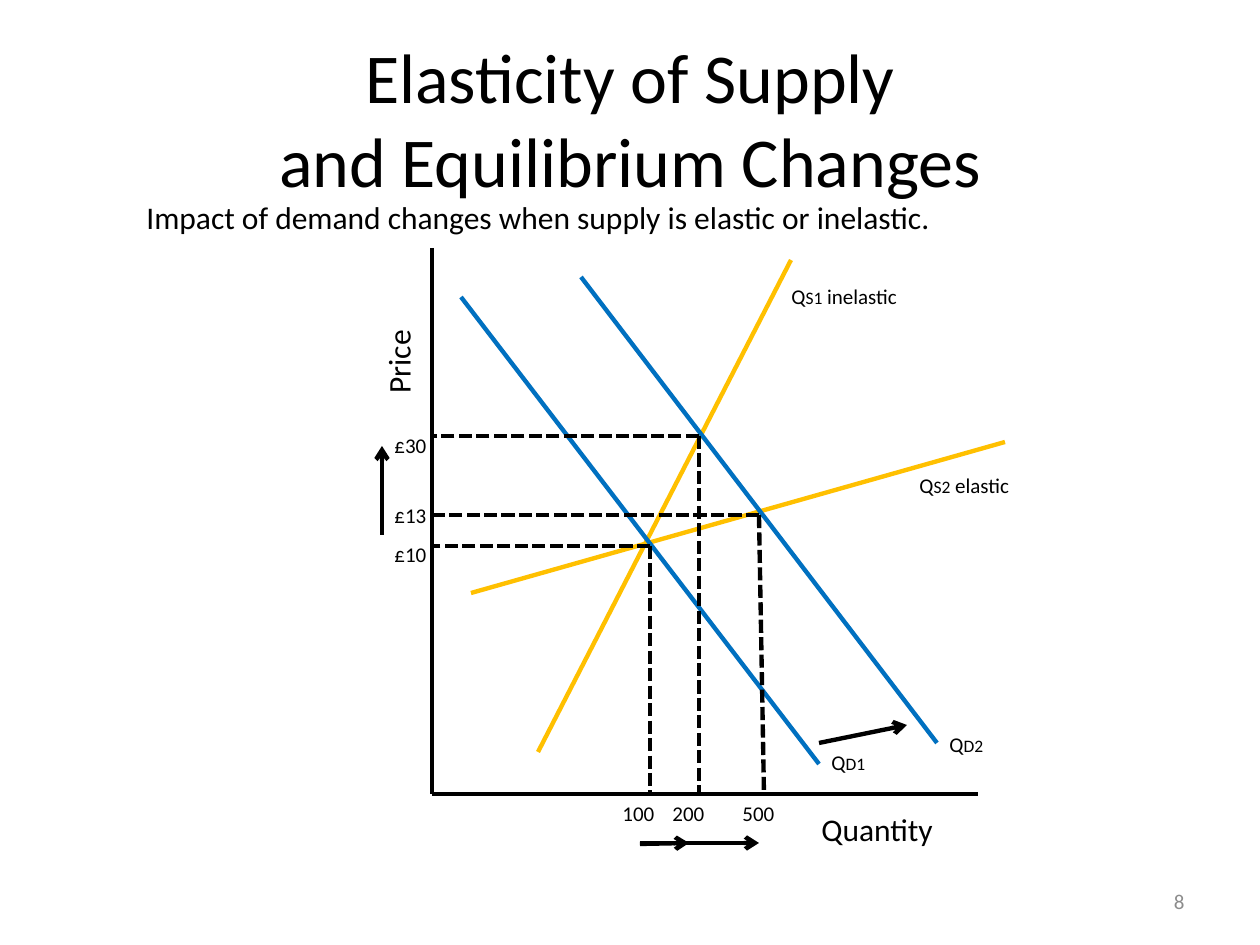
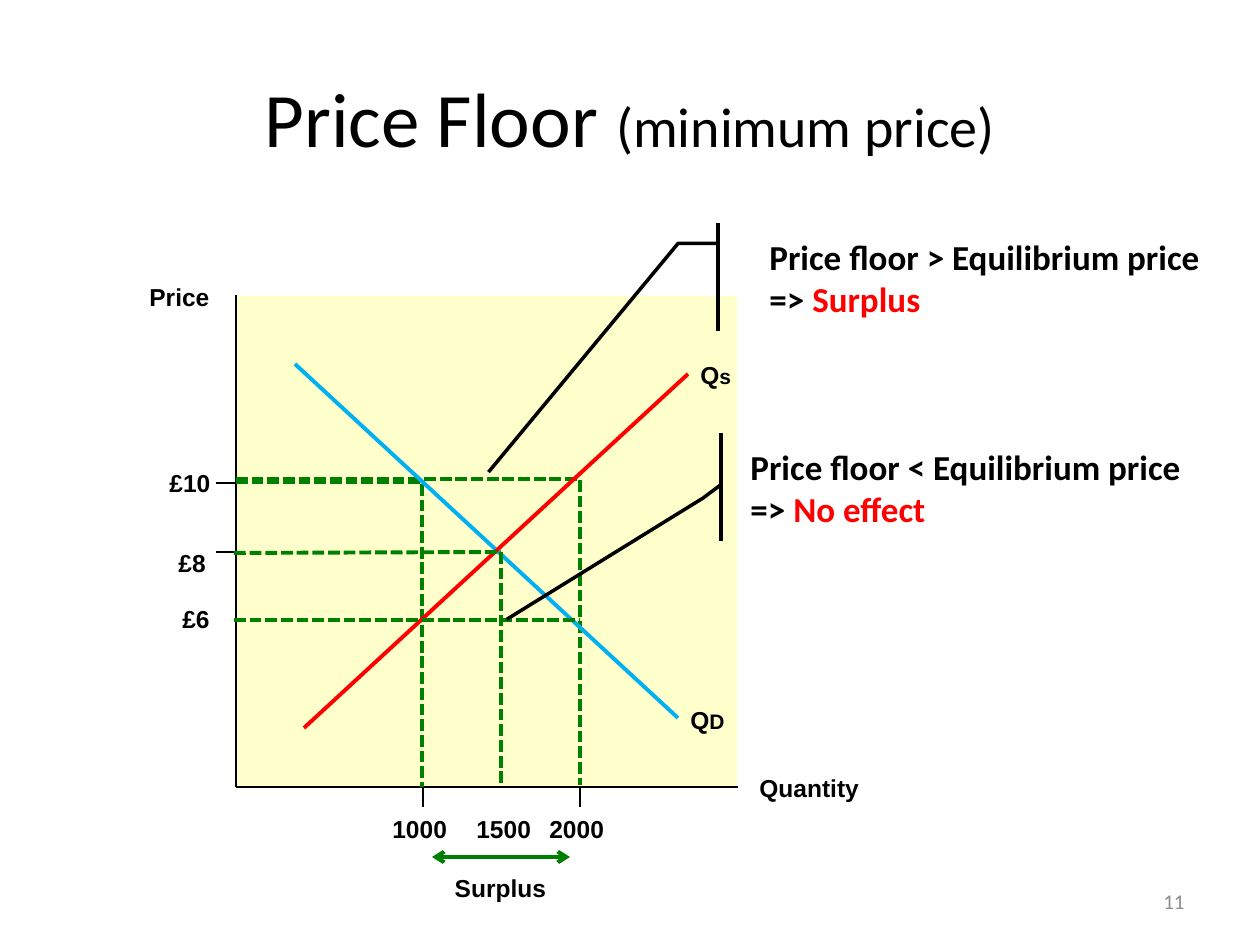
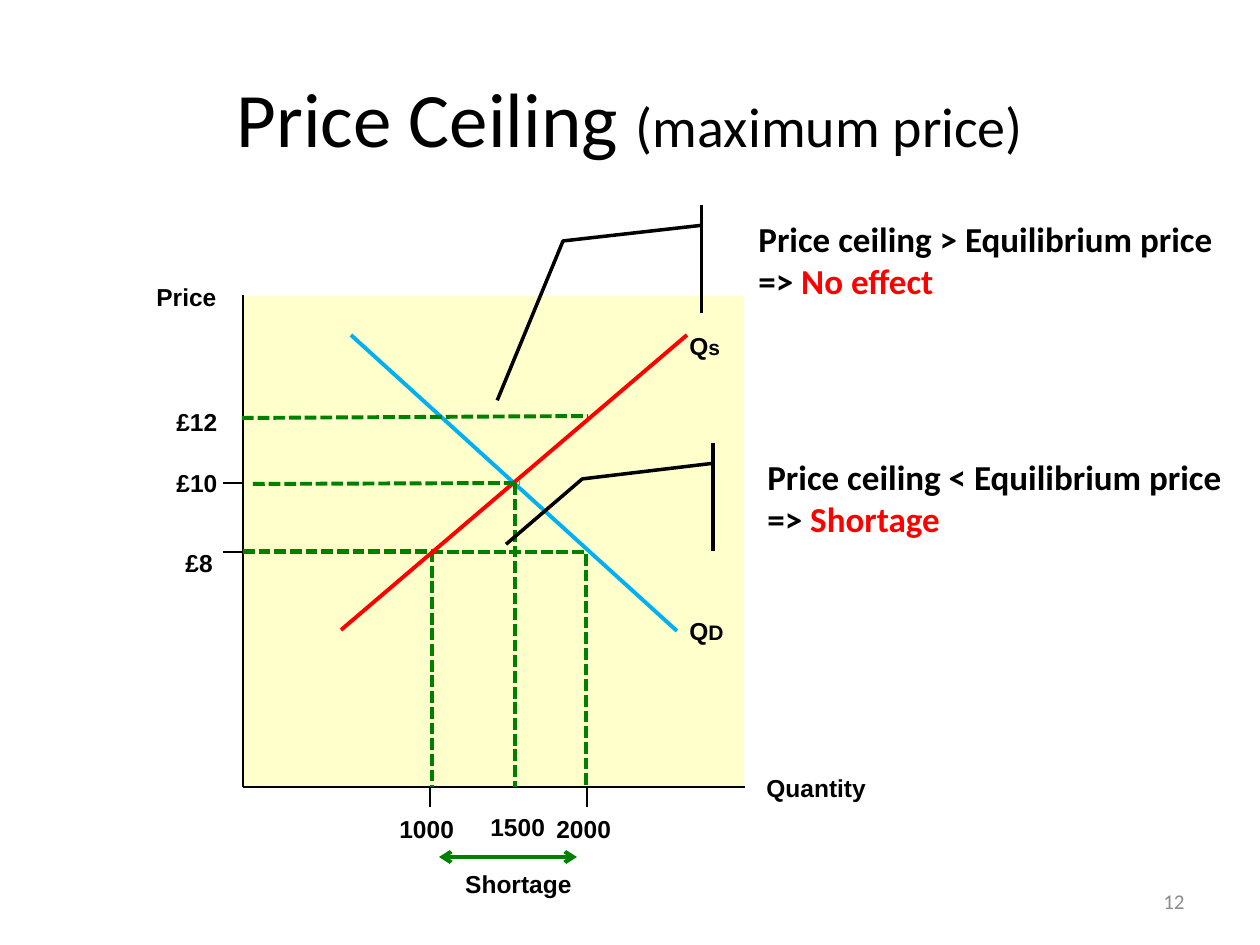
from lxml.etree import SubElement
from pptx import Presentation
from pptx.dml.color import RGBColor
from pptx.enum.dml import MSO_LINE
from pptx.enum.shapes import MSO_CONNECTOR, MSO_SHAPE
from pptx.enum.text import MSO_ANCHOR, PP_ALIGN
from pptx.oxml.ns import qn
from pptx.util import Emu, Pt

BLACK = RGBColor(0x00, 0x00, 0x00)
WHITE = RGBColor(0xFF, 0xFF, 0xFF)
GREY = RGBColor(0x8C, 0x8C, 0x8C)
CREAM = RGBColor(0xFF, 0xFF, 0xCC)
RED = RGBColor(0xFF, 0x00, 0x00)
GREEN = RGBColor(0x00, 0x80, 0x00)
SKY = RGBColor(0x00, 0xB0, 0xF0)
BLUE = RGBColor(0x00, 0x70, 0xC0)
AMBER = RGBColor(0xFF, 0xC0, 0x00)

PX = 914400 / 126
SLIDE_SIZE = (1260, 945)
TITLE_BOX = (63, 38, 1134, 158)
NUMBER_BOX = (903, 876, 294, 50)

# Slide 1: supply elasticity, all positions in px
ELASTICITY = {
    "number": "8",
    "title": [[("Elasticity of Supply", {}), ("\n", {}), ("and Equilibrium Changes", {})]],
    "lead": "Impact of demand changes when supply is elastic or inelastic.",
    "origin": (432, 794),
    "axis_ends": [(432, 248), (978, 794)],
    "curves": [
        (AMBER, (538, 752), (791, 260)),
        (AMBER, (471, 593), (1005, 442)),
        (BLUE, (461, 297), (819, 764)),
        (BLUE, (581, 277), (937, 743)),
    ],
    # equilibrium point, x of its foot on the quantity axis
    "equilibria": [((650, 546), 650), ((759, 515), 764), ((699, 436), 699)],
    "shifts": [
        ((819, 743), (907, 725)),
        ((640, 844), (689, 843)),
        ((382, 535), (382, 446)),
        ((640, 843), (759, 843)),
    ],
    # subscript, ending, left, top
    "curve_labels": [
        ("S1", " inelastic", 779, 277),
        ("S2", " elastic", 907, 466),
        ("D1", "", 819, 743),
        ("D2", "", 937, 725),
    ],
    "prices": [("£10", 535), ("£13", 496), ("£30", 426)],
    "quantities": [("100", 610), ("200", 660), ("500", 730)],
}

# Slides 2 and 3: price controls; left is the x of the price axis
CONTROLS = [
    {
        "number": "11",
        "title": ("Price Floor ", "(minimum price)"),
        "left": 236,
        "demand": ((295, 364), (678, 718)),
        "supply": ((304, 728), (688, 374)),
        "curve_labels": [("D", 678, 699), ("s", 688, 354)],
        "elbows": [((236, 479), (580, 785)), ((236, 482), (422, 787))],
        "guides": [((234, 553), (501, 552)), ((501, 552), (501, 785)), ((234, 620), (580, 620))],
        "labels": [("1500", 464, 808), ("£6", 170, 598)],
        "gap": ("Surplus", 432, 867),
        "callouts": [
            ("Price floor > Equilibrium price", "Surplus", (757, 223, 472, 108),
             (0.188, -0.083, 0.188, -0.167, 2.307, -0.569)),
            ("Price floor < Equilibrium price", "No effect", (738, 433, 459, 108),
             (0.478, -0.037, 0.602, -0.076, 1.726, -0.504)),
        ],
    },
    {
        "number": "12",
        "title": ("Price Ceiling ", "(maximum price)"),
        "left": 243,
        "demand": ((351, 335), (677, 631)),
        "supply": ((341, 630), (687, 335)),
        "curve_labels": [("D", 677, 610), ("s", 677, 325)],
        "elbows": [((243, 552), (586, 785)), ((243, 551), (432, 787))],
        "guides": [((253, 484), (520, 483)), ((515, 483), (515, 787)), ((242, 418), (588, 416))],
        "labels": [("1500", 478, 806), ("£12", 164, 401)],
        "gap": ("Shortage", 450, 863),
        "callouts": [
            ("Price ceiling < Equilibrium price", "Shortage", (755, 443, 505, 108),
             (0.188, -0.083, 0.333, -0.342, 0.938, -0.493)),
            ("Price ceiling > Equilibrium price", "No effect", (746, 205, 535, 108),
             (0.188, -0.083, 0.333, -0.342, 1.809, -0.465)),
        ],
    },
]

# Shared by both price control diagrams; x counts from the price axis
PLOT_TOP, PLOT_BOTTOM, PLOT_WIDTH = 295, 787, 502
QUANTITY_TICKS = (187, 344)
PRICE_TICKS = (552, 483)
GAP_ARROW = (196, 334, 857)
AXIS_LABELS = [
    ("£8", -70, 542, 69), ("£10", -79, 462, 69),
    ("1000", 144, 808, 98), ("2000", 301, 808, 98),
    ("Price", -99, 276, 98), ("Quantity", 511, 767, 137),
]


def px(*lengths):
    return [Emu(round(length * PX)) for length in lengths]


def write(shape, text, size=18, font="Calibri", color=BLACK, bold=False,
          align=PP_ALIGN.LEFT, anchor=MSO_ANCHOR.TOP, wrap=True):
    """Fill a shape with a string, or with paragraphs of (text, overrides) runs."""
    frame = shape.text_frame
    frame.word_wrap = wrap
    frame.vertical_anchor = anchor
    paragraphs = [[(text, {})]] if isinstance(text, str) else text
    for i, runs in enumerate(paragraphs):
        paragraph = frame.add_paragraph() if i else frame.paragraphs[0]
        paragraph.alignment = align
        for content, overrides in runs:
            if content == "\n":
                paragraph.add_line_break()
                continue
            run = paragraph.add_run()
            run.text = content
            run.font.name = font
            run.font.bold = bold
            run.font.size = Pt(overrides.get("size", size))
            run.font.color.rgb = overrides.get("color", color)


def put_text(slide, text, box, rotation=0, **style):
    shape = slide.shapes.add_textbox(*px(*box))
    shape.rotation = rotation
    write(shape, text, **style)


def put_line(slide, start, end, color=BLACK, width=2.5, dashed=False, arrows=(), elbow=False):
    kind = MSO_CONNECTOR.ELBOW if elbow else MSO_CONNECTOR.STRAIGHT
    line = slide.shapes.add_connector(kind, *px(*start, *end))
    line.line.color.rgb = color
    line.line.width = Pt(width)
    if dashed:
        line.line.dash_style = MSO_LINE.SQUARE_DOT
    properties = line._element.spPr
    if elbow:  # across first, then down at the far end
        geometry = properties.find(qn("a:prstGeom"))
        guides = geometry.find(qn("a:avLst"))
        if guides is None:
            guides = SubElement(geometry, qn("a:avLst"))
        SubElement(guides, qn("a:gd"), name="adj1", fmla="val 100000")
    for end_name in arrows:
        SubElement(properties.find(qn("a:ln")), qn(f"a:{end_name}"), type="arrow")
    SubElement(properties, qn("a:effectLst"))


def start_slide(deck, title, number, title_size):
    slide = deck.slides.add_slide(deck.slide_layouts[6])
    put_text(slide, title, TITLE_BOX, size=title_size, align=PP_ALIGN.CENTER,
             anchor=MSO_ANCHOR.MIDDLE)
    put_text(slide, number, NUMBER_BOX, size=12, color=GREY, align=PP_ALIGN.RIGHT,
             anchor=MSO_ANCHOR.MIDDLE)
    return slide


def build_elasticity(deck, data):
    slide = start_slide(deck, data["title"], data["number"], 40)
    put_text(slide, data["lead"], (134, 192, 1126, 50))

    # Axes, curves and equilibrium guides
    origin = data["origin"]
    for end in data["axis_ends"]:
        put_line(slide, end, origin)
    for color, start, end in data["curves"]:
        put_line(slide, start, end, color)
    for point, foot in data["equilibria"]:
        put_line(slide, point, (foot, origin[1]), dashed=True)
        put_line(slide, point, (origin[0], point[1]), dashed=True)
    for start, end in data["shifts"]:
        put_line(slide, start, end, arrows=["tailEnd"])

    # Labels
    for subscript, ending, left, top in data["curve_labels"]:
        runs = [("Q", {}), (subscript, {"size": 10})]
        if ending:
            runs.append((ending, {}))
        put_text(slide, [runs], (left, top, 169 if ending else 59, 38), size=12, wrap=False)
    put_text(slide, "Price", (338, 321, 120, 50), rotation=270)
    put_text(slide, "Quantity", (809, 804, 169, 50))
    for price, top in data["prices"]:
        put_text(slide, price, (382, top, 69, 38), size=12)
    for quantity, left in data["quantities"]:
        put_text(slide, quantity, (left, origin[1], 79, 38), size=12)


def build_control(deck, data):
    name, meaning = data["title"]
    slide = start_slide(deck, [[(name, {}), (meaning, {"size": 32})]], data["number"], 44)
    left = data["left"]
    label = {"size": 14, "font": "Arial", "bold": True}

    # Plot area, axes and ticks
    plot = slide.shapes.add_shape(
        MSO_SHAPE.RECTANGLE, *px(left, PLOT_TOP, PLOT_WIDTH, PLOT_BOTTOM - PLOT_TOP))
    plot.shadow.inherit = False
    plot.fill.solid()
    plot.fill.fore_color.rgb = CREAM
    plot.line.color.rgb = WHITE
    plot.line.width = Pt(0.75)
    axes = [((left, PLOT_BOTTOM), (left + PLOT_WIDTH, PLOT_BOTTOM)),
            ((left, PLOT_TOP), (left, PLOT_BOTTOM))]
    axes += [((left + x, PLOT_BOTTOM), (left + x, PLOT_BOTTOM + 20)) for x in QUANTITY_TICKS]
    axes += [((left - 20, y), (left, y)) for y in PRICE_TICKS]
    for start, end in axes:
        put_line(slide, start, end, width=0.75)

    # Guides and curves
    for start, end in data["elbows"]:
        put_line(slide, start, end, GREEN, 2.25, dashed=True, elbow=True)
    put_line(slide, *data["demand"], SKY, 2.25)
    put_line(slide, *data["supply"], RED, 2.25)
    for start, end in data["guides"]:
        put_line(slide, start, end, GREEN, 2.25, dashed=True)

    # Labels
    for text, offset, top, width in AXIS_LABELS:
        put_text(slide, text, (left + offset, top, width, 43), **label)
    for text, x, top in data["labels"]:
        put_text(slide, text, (x, top, 98, 43), **label)
    for subscript, x, top in data["curve_labels"]:
        put_text(slide, [[("Q", {}), (subscript, {"size": 12})]], (x, top, 78, 43), **label)

    # Gap between the quantities supplied and demanded
    arrow_start, arrow_end, arrow_y = GAP_ARROW
    put_line(slide, (left + arrow_start, arrow_y), (left + arrow_end, arrow_y), GREEN, 2.25,
             arrows=["headEnd", "tailEnd"])
    gap, x, top = data["gap"]
    put_text(slide, gap, (x, top, 137, 43), align=PP_ALIGN.CENTER, **label)

    # Callouts
    for condition, outcome, box, pointer in data["callouts"]:
        callout = slide.shapes.add_shape(MSO_SHAPE.LINE_CALLOUT_2_ACCENT_BAR, *px(*box))
        callout.shadow.inherit = False
        callout.fill.background()
        callout.line.color.rgb = BLACK
        callout.line.width = Pt(2)
        for i, value in enumerate(pointer):
            callout.adjustments[i] = value
        write(callout, [[(condition, {})], [("=> ", {}), (outcome, {"color": RED})]],
              size=20, bold=True, anchor=MSO_ANCHOR.MIDDLE)


def main():
    deck = Presentation()
    deck.slide_width, deck.slide_height = px(*SLIDE_SIZE)
    build_elasticity(deck, ELASTICITY)
    for control in CONTROLS:
        build_control(deck, control)
    deck.save("out.pptx")


if __name__ == "__main__":
    main()
